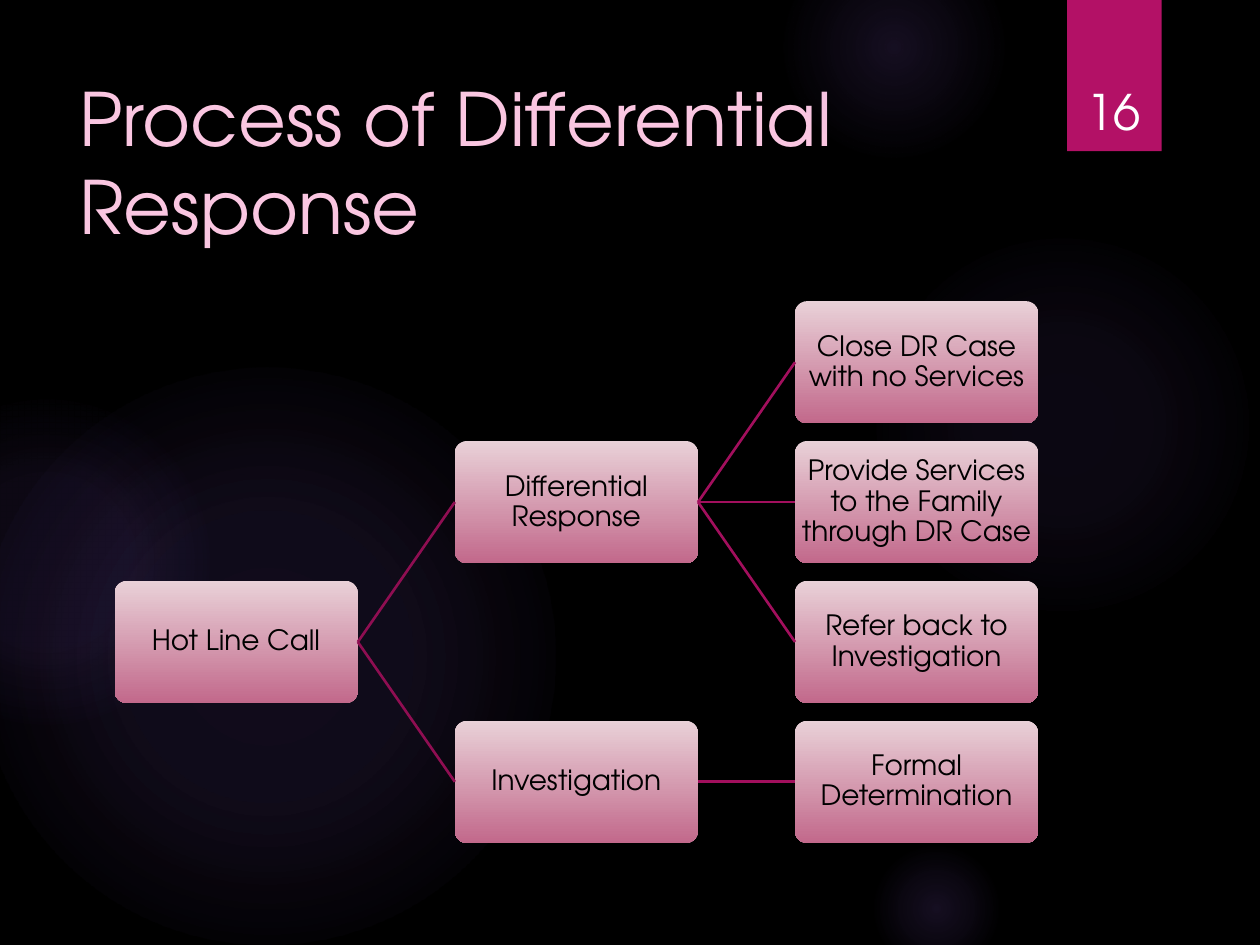
from lxml.etree import fromstring, SubElement
from pptx import Presentation
from pptx.dml.color import RGBColor
from pptx.enum.shapes import MSO_CONNECTOR, MSO_SHAPE
from pptx.enum.text import MSO_ANCHOR, PP_ALIGN
from pptx.oxml.ns import nsdecls, qn
from pptx.util import Inches, Pt

HUES = {
    "back": "000000", "glow": "9B6BF2", "tag": "B31166", "title": "FAC6E1",
    "top": "E9D1D8", "base": "C2698B", "text": "000000", "page": "FFFFFF",
    "near": "8F0E52", "far": "A20F5D",
}
FACE = "TeX Gyre Adventor"
TITLE = "Process of Differential Response"
PAGE = "16"
CARDS = {
    "call": ("Hot Line Call", 0, 2),
    "dr": ("Differential Response", 1, 1),
    "probe": ("Investigation", 1, 3),
    "close": ("Close DR Case with no Services", 2, 0),
    "serve": ("Provide Services to the Family through DR Case", 2, 1),
    "refer": ("Refer back to Investigation", 2, 2),
    "formal": ("Formal Determination", 2, 3),
}
LINKS = [
    ("call", "dr", "near"), ("call", "probe", "near"),
    ("dr", "close", "far"), ("dr", "serve", "far"),
    ("dr", "refer", "far"), ("probe", "formal", "far"),
]
GLOWS = [
    (6.89, 1.83, 3.08, [(0, 7), (36, 6), (69, 0)]),
    (6.22, -0.5, 1.75, [(0, 14), (36, 7), (73, 0)]),
    (6.89, 6.67, 1.08, [(0, 14), (36, 7), (66, 0)]),
    (-0.17, 2.92, 4.58, [(0, 11), (36, 10), (75, 0)]),
    (-0.92, 3.17, 2.58, [(0, 8), (36, 8), (72, 0)]),
]
LEFT, TOP = 0.91, 2.39
COL, ROW = 2.7, 1.11
WIDE, HIGH = 1.93, 0.97


def hue(name):
    return RGBColor.from_string(HUES[name])


def box(at):
    return [Inches(n) for n in at]


def form(thing, rules):
    for name, value in rules.items():
        setattr(thing, name, value)


def shape(kind, at):
    item = slide.shapes.add_shape(kind, *box(at))
    item.shadow.inherit = False
    item.line.fill.background()
    return item


def write(item, text, size, tint, anchor, align, gap=None, pad=None):
    frame = item.text_frame
    form(frame, {"word_wrap": True, "vertical_anchor": anchor, "text": text})
    if pad is not None:
        sides = ("left", "right", "top", "bottom")
        form(frame, {f"margin_{side}": Inches(pad) for side in sides})
    line = frame.paragraphs[0]
    form(line, {"alignment": align, "line_spacing": gap})
    font = line.runs[0].font
    form(font, {"name": FACE, "size": Pt(size), "bold": False})
    font.color.rgb = hue(tint)


def glow(left, top, size, stops):
    item = shape(MSO_SHAPE.OVAL, (left, top, size, size))
    item.fill.solid()
    marks = "".join(
        f'<a:gs pos="{spot * 1000}"><a:srgbClr val="{HUES["glow"]}">'
        f'<a:alpha val="{alpha * 1000}"/></a:srgbClr></a:gs>'
        for spot, alpha in stops
    )
    fade = fromstring(
        f'<a:gradFill {nsdecls("a")} rotWithShape="1"><a:gsLst>{marks}</a:gsLst>'
        '<a:path path="circle"><a:fillToRect l="50000" t="50000" r="50000" '
        'b="50000"/></a:path></a:gradFill>'
    )
    props = item.element.spPr
    props.replace(props.find(qn("a:solidFill")), fade)


def card(text, col, row):
    at = (LEFT + col * COL, TOP + row * ROW, WIDE, HIGH)
    item = shape(MSO_SHAPE.ROUNDED_RECTANGLE, at)
    item.adjustments[0] = 0.1
    item.fill.gradient()
    item.fill.gradient_angle = 270
    for stop, name in zip(item.fill.gradient_stops, ("top", "base")):
        stop.color.rgb = hue(name)
    write(item, text, 16, "text", MSO_ANCHOR.MIDDLE, PP_ALIGN.CENTER, 0.9, 0.01)
    return item


def link(start, end, tint):
    wire = slide.shapes.add_connector(MSO_CONNECTOR.STRAIGHT, 0, 0, 0, 0)
    wire.begin_connect(start, 3)
    wire.end_connect(end, 1)
    wire.line.width = Pt(1.5)
    wire.line.color.rgb = hue(tint)
    SubElement(wire.element.spPr, qn("a:effectLst"))


deck = Presentation()
form(deck, {"slide_width": Inches(10), "slide_height": Inches(7.5)})
slide = deck.slides.add_slide(deck.slide_layouts[5])
slide.background.fill.solid()
slide.background.fill.fore_color.rgb = hue("back")

for spec_row in GLOWS:
    glow(*spec_row)

tag = shape(MSO_SHAPE.RECTANGLE, (8.47, 0, 0.75, 1.2))
tag.fill.solid()
tag.fill.fore_color.rgb = hue("tag")

title = slide.shapes.title
form(title, dict(zip(("left", "top", "width", "height"), box((0.53, 0.5, 7.72, 1.53)))))
write(title, TITLE, 42, "title", MSO_ANCHOR.BOTTOM, PP_ALIGN.LEFT)

cards = {key: card(*item) for key, item in CARDS.items()}
for start, end, tint in LINKS:
    link(cards[start], cards[end], tint)

page = slide.shapes.add_textbox(*box((8.49, 0.32, 0.69, 0.84)))
write(page, PAGE, 28, "page", MSO_ANCHOR.BOTTOM, PP_ALIGN.CENTER)

deck.save("out.pptx")
